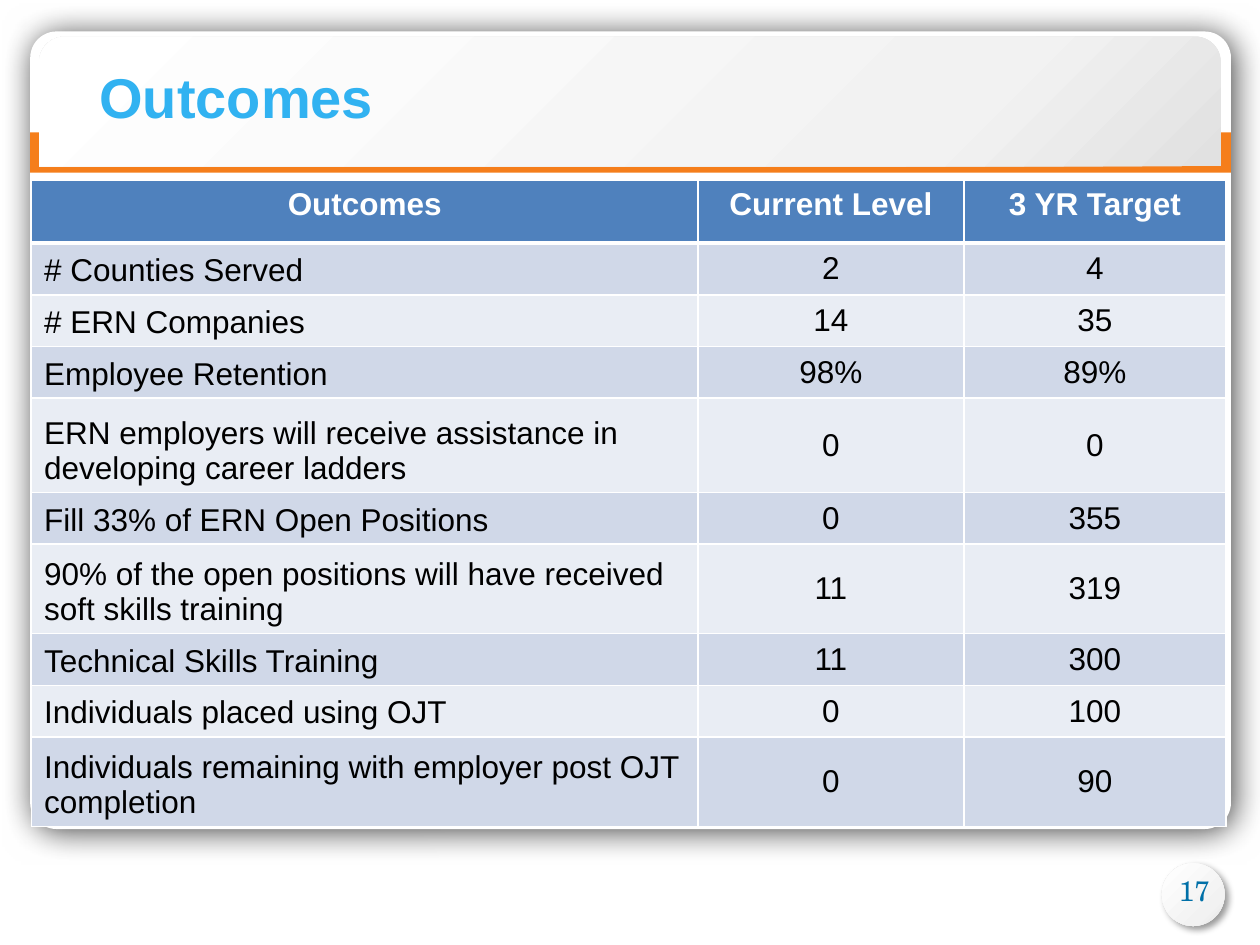
"""Build the Outcomes slide: framed panel, header band and a table of targets."""
from dataclasses import dataclass

from lxml import etree
from pptx import Presentation
from pptx import util as u
from pptx.dml.color import RGBColor
from pptx.enum import shapes, text
from pptx.oxml.ns import qn


@dataclass(frozen=True)
class Theme:
    white: str = "FFFFFF"
    black: str = "000000"
    orange: str = "F57E1B"
    title: str = "31B2F1"
    number: str = "0070A8"
    header: str = "4F81BD"
    bands: tuple = ("D0D8E8", "E9EDF4")
    silver: tuple = ((0, "E1E1E1"), (24, "F2F2F2"), (99, "FFFFFF"))
    font: str = "Arial"
    number_font: str = "TeX Gyre Schola"
    title_size: int = 32
    table_size: int = 18
    number_size: int = 16


theme = Theme()


def add_panel(kind, box, adjustments, color=None, shadow=None):
    shape = slide.shapes.add_shape(kind, *map(u.Inches, box))
    for index, value in enumerate(adjustments):
        shape.adjustments[index] = value
    shape.shadow.inherit = False
    shape.line.fill.background()
    properties = shape._element.spPr
    if color:
        shape.fill.solid()
        shape.fill.fore_color.rgb = RGBColor.from_string(color)
    else:
        shape.fill.gradient()
        shape.fill.gradient_angle = 135
        stops = properties.find(".//" + qn("a:gsLst"))
        for stop in list(stops):
            stops.remove(stop)
        for position, stop_color in theme.silver:
            stop = etree.SubElement(stops, qn("a:gs"), pos=str(position * 1000))
            etree.SubElement(stop, qn("a:srgbClr"), val=stop_color)
    if shadow:
        opacity, blur = shadow
        outer = etree.SubElement(
            properties.find(qn("a:effectLst")), qn("a:outerShdw"),
            blurRad=str(u.Pt(blur)), dist=str(u.Pt(3)), dir=str(45 * 60000),
            algn="ctr", rotWithShape="0")
        tint = etree.SubElement(outer, qn("a:srgbClr"), val=theme.black)
        etree.SubElement(tint, qn("a:alpha"), val=str(opacity * 1000))


def add_run(paragraph, words, size, color, bold=False, font=theme.font):
    run = paragraph.add_run()
    run.text = words
    run.font.name = font
    run.font.size = u.Pt(size)
    run.font.bold = bold
    run.font.color.rgb = RGBColor.from_string(color)


presentation = Presentation()
presentation.slide_width = u.Inches(10)
presentation.slide_height = u.Inches(7.5)
slide = presentation.slides.add_slide(presentation.slide_layouts[6])

preset = shapes.MSO_SHAPE
add_panel(preset.ROUNDED_RECTANGLE, (0.24, 0.25, 9.53, 6.33), [0.033],
          theme.white, shadow=(72, 18))
add_panel(preset.RECTANGLE, (0.24, 1.05, 9.53, 0.32), [], theme.orange)
add_panel(preset.ROUND_2_SAME_RECTANGLE, (0.31, 0.29, 9.38, 1.03), [0.2, 0])
add_panel(preset.ROUNDED_RECTANGLE, (9.22, 6.85, 0.5, 0.5), [0.5], shadow=(40, 4))

number_box = slide.shapes.add_textbox(*map(u.Inches, (9.11, 6.93, 0.74, 0.33)))
number_frame = number_box.text_frame
number_frame.word_wrap = True
number_frame.margin_top = 0
paragraph = number_frame.paragraphs[0]
paragraph.alignment = text.PP_ALIGN.CENTER
add_run(paragraph, "17", theme.number_size, theme.number, font=theme.number_font)

title_box = slide.shapes.add_textbox(*map(u.Inches, (0.69, 0.51, 5.86, 0.59)))
title_frame = title_box.text_frame
title_frame.word_wrap = True
title_frame.auto_size = text.MSO_AUTO_SIZE.SHAPE_TO_FIT_TEXT
paragraph = title_frame.paragraphs[0]
paragraph.line_spacing = 0.9
add_run(paragraph, "Outcomes", theme.title_size, theme.title, bold=True)

rows = [
    (0.5, "Outcomes", "Current Level", "3 YR Target"),
    (0.41, "# Counties Served", "2", "4"),
    (0.41, "# ERN Companies", "14", "35"),
    (0.41, "Employee Retention", "98%", "89%"),
    (0.75, "ERN employers will receive assistance in developing career ladders", "0", "0"),
    (0.41, "Fill 33% of ERN Open Positions", "0", "355"),
    (0.71, "90% of the open positions will have received soft skills training", "11", "319"),
    (0.41, "Technical Skills Training", "11", "300"),
    (0.41, "Individuals placed using OJT", "0", "100"),
    (0.71, "Individuals remaining with employer post OJT completion", "0", "90"),
]
column_widths = (5.29, 2.11, 2.08)
table = slide.shapes.add_table(
    len(rows), len(column_widths), *map(u.Inches, (0.25, 1.43, 9.48, 5.17))).table
for column, width in zip(table.columns, column_widths):
    column.width = u.Inches(width)

for row_index, (height, *labels) in enumerate(rows):
    table.rows[row_index].height = u.Inches(height)
    is_header = row_index == 0
    for column_index, label in enumerate(labels):
        cell = table.cell(row_index, column_index)
        is_name = column_index == 0 and not is_header
        if is_header:
            cell.vertical_anchor = text.MSO_ANCHOR.TOP
        else:
            cell.vertical_anchor = (
                text.MSO_ANCHOR.BOTTOM if is_name else text.MSO_ANCHOR.MIDDLE)
        cell_properties = cell._tc.get_or_add_tcPr()
        for side in "LRTB":
            is_rule = (side == "B" and is_header) or (side == "T" and row_index == 1)
            border = etree.SubElement(cell_properties, qn(f"a:ln{side}"),
                                      w=str(u.Pt(3 if is_rule else 1)))
            line_fill = etree.SubElement(border, qn("a:solidFill"))
            etree.SubElement(line_fill, qn("a:srgbClr"), val=theme.white)
        cell.fill.solid()
        cell.fill.fore_color.rgb = RGBColor.from_string(
            theme.header if is_header else theme.bands[(row_index - 1) % 2])
        paragraph = cell.text_frame.paragraphs[0]
        paragraph.alignment = text.PP_ALIGN.LEFT if is_name else text.PP_ALIGN.CENTER
        add_run(paragraph, label, theme.table_size,
                theme.white if is_header else theme.black, bold=is_header)

presentation.save("out.pptx")
